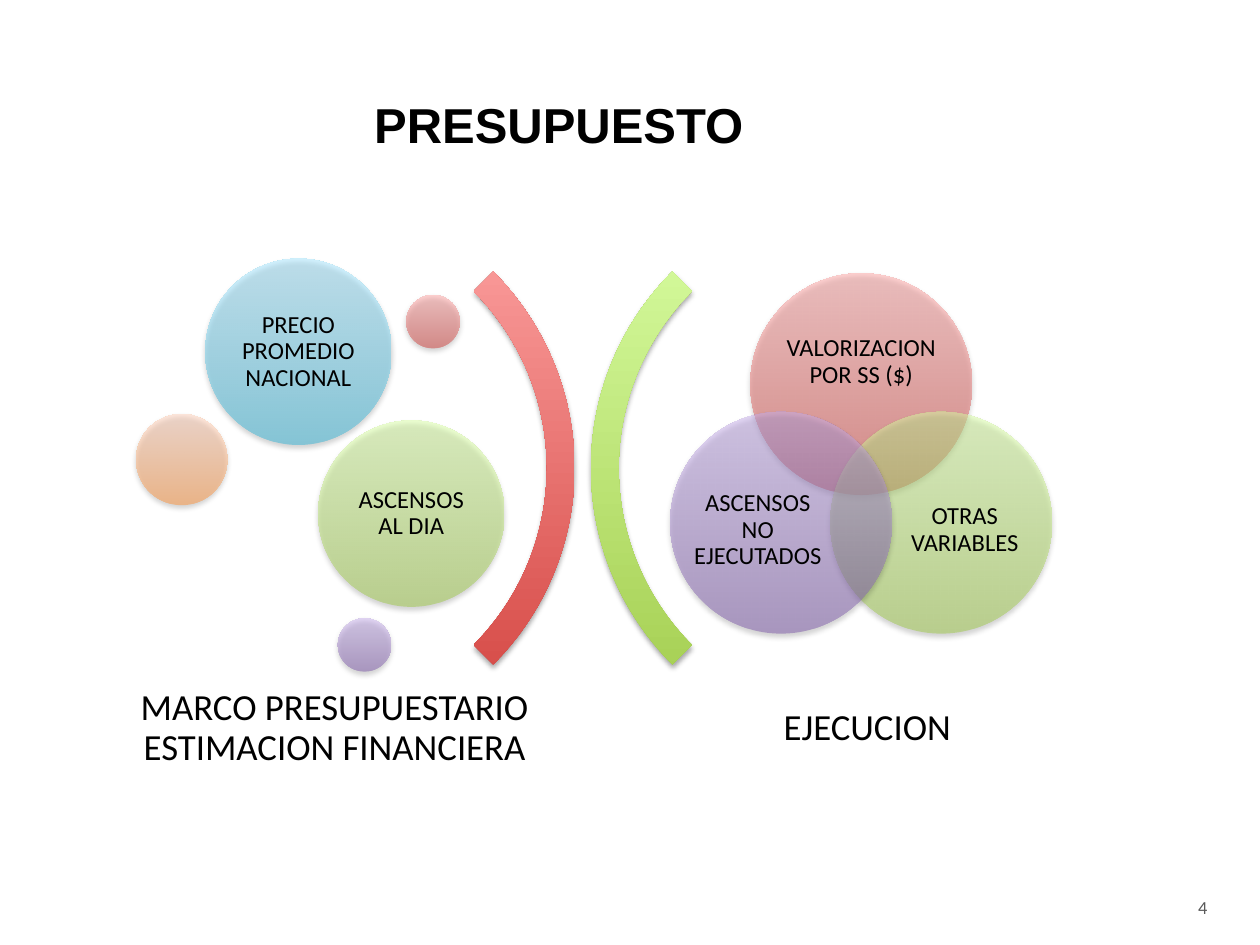
from lxml import etree
from pptx import Presentation
from pptx.dml.color import RGBColor
from pptx.enum import shapes, text
from pptx.oxml import ns
from pptx.util import Pt

COLORS = {
    "text": "000000",
    "number": "595959",
    "red": ("D1403C", "FFA6A5"),
    "green": ("A0CA4A", "DAFFA5"),
    "purple": ("7F5BAB", "C8B0ED"),
    "blue": ("39B7D8", "A7E6FF"),
    "orange": ("FF953E", "FFD2BD"),
}

deck = Presentation()
deck.slide_width, deck.slide_height = Pt(720), Pt(540)
page = deck.slides.add_slide(deck.slide_layouts[6])


def add_gradient_shape(kind, left, top, size, color, alpha):
    shape = page.shapes.add_shape(kind, Pt(left), Pt(top), Pt(size), Pt(size))
    shape.fill.gradient()
    shape.fill.gradient_angle = 90
    for stop, position, shade in zip(shape.fill.gradient_stops, (0, 1), COLORS[color]):
        stop.position = position
        stop.color.rgb = RGBColor.from_string(shade)
    shape.line.fill.background()
    shape.shadow.inherit = False
    properties = shape._element.spPr
    gradient = properties.find(ns.qn("a:gradFill"))
    gradient.set("rotWithShape", "0")
    for shade in gradient.iter(ns.qn("a:srgbClr")):
        etree.SubElement(shade, ns.qn("a:alpha"), val=str(alpha * 1000))
    shadow = etree.SubElement(
        properties.find(ns.qn("a:effectLst")), ns.qn("a:outerShdw"),
        blurRad=str(Pt(3.1)), dist=str(Pt(1.8)), dir="5400000", rotWithShape="0")
    black = etree.SubElement(shadow, ns.qn("a:srgbClr"), val=COLORS["text"])
    etree.SubElement(black, ns.qn("a:alpha"), val="35000")
    return shape


def add_label(words, left, top, width, height, size, inset):
    box = page.shapes.add_textbox(Pt(left), Pt(top), Pt(width), Pt(height))
    frame = box.text_frame
    frame.word_wrap = True
    frame.vertical_anchor = text.MSO_ANCHOR.MIDDLE
    frame.margin_left = frame.margin_right = Pt(inset)
    frame.margin_top = frame.margin_bottom = Pt(inset)
    frame.text = words
    para = frame.paragraphs[0]
    para.alignment = text.PP_ALIGN.CENTER
    para.line_spacing = 0.9
    span = para.runs[0]
    span.font.name, span.font.size = "Calibri", Pt(size)
    span.font.color.rgb = RGBColor.from_string(COLORS["text"])


for left, rotation, color in ((10.8, 90, "red"), (337.7, 270, "green")):
    arc = add_gradient_shape(shapes.MSO_SHAPE.BLOCK_ARC, left, 108.7, 317.5, color, 100)
    arc.rotation = rotation
    for index, value in enumerate((135, 189, 0.05)):
        arc.adjustments[index] = value

circles = [
    (428.8, 156.2, 126.7, "red", "VALORIZACION POR SS ($)", (445.7, 178.4, 92.9, 57), 0),
    (474.5, 235.4, 126.7, "green", "OTRAS VARIABLES", (513.3, 268.1, 76, 69.7), 0),
    (383, 235.4, 126.7, "purple", "ASCENSOS NO EJECUTADOS", (395, 268.1, 76, 69.7), 0),
    (117.3, 147.8, 106.5, "blue", "PRECIO PROMEDIO NACIONAL", (132.9, 163.4, 75.3, 75.3), 4.5),
    (77.8, 236.6, 52.1, "orange", None, None, 0),
    (232.2, 168.6, 30.5, "red", None, None, 0),
    (181.8, 240.3, 106.5, "green", "ASCENSOS AL DIA", (197.4, 255.9, 75.3, 75.3), 4.5),
    (193.1, 353.3, 30.5, "purple", None, None, 0),
]
for left, top, size, color, words, area, inset in circles:
    add_gradient_shape(shapes.MSO_SHAPE.OVAL, left, top, size, color, 50)
    if words:
        add_label(words, *area, 14, inset)

for words, left in (("MARCO PRESUPUESTARIO ESTIMACION FINANCIERA", 70.6), ("EJECUCION", 375)):
    add_label(words, left, 384.5, 241.2, 63.4, 21, 6.5)

for words, area, font, size, color, bold in (
    ("PRESUPUESTO", (206.8, 50.6, 227.5, 41.2), "Arial", 28, "text", True),
    ("4", (677.5, 508.3, 34.6, 20.9), "Calibri", 10.5, "number", False),
):
    box = page.shapes.add_textbox(*map(Pt, area))
    box.text_frame.word_wrap = False
    box.text_frame.auto_size = text.MSO_AUTO_SIZE.SHAPE_TO_FIT_TEXT
    box.text_frame.text = words
    span = box.text_frame.paragraphs[0].runs[0]
    span.font.name, span.font.size, span.font.bold = font, Pt(size), bold
    span.font.color.rgb = RGBColor.from_string(COLORS[color])

deck.save("out.pptx")
